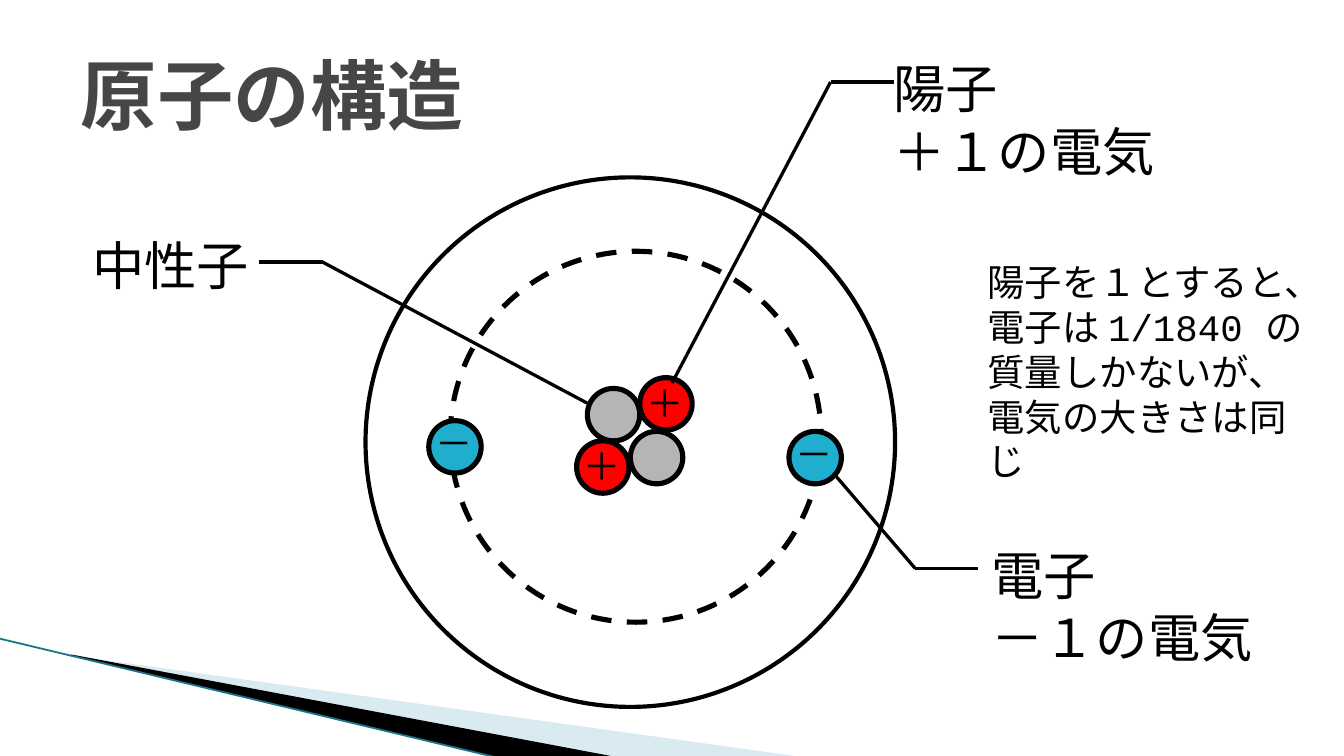
from lxml import etree
from pptx import Presentation
from pptx import util as u
from pptx.dml.color import RGBColor
from pptx.enum import dml, shapes, text
from pptx.oxml.ns import qn

COLORS = {
    "ink": "000000", "title": "464646", "shell": "FFFFFF",
    "neutron": "B5B5B5", "proton": "FF0000", "electron": "1FAECD",
    "pale_wedge": "A0CBDC", "dark_wedge": "000000", "edge": "1B7489",
}
PARTICLE = 0.39


def rgb(name):
    return RGBColor.from_string(COLORS[name])


def set_font(p, name, size, color="ink", bold=False):
    p.font.name, p.font.size, p.font.bold = name, u.Pt(size), bold
    p.font.color.rgb = rgb(color)


def add_wedge(s, points, color, opacity=None):
    start, *rest = [(u.Inches(x), u.Inches(y)) for x, y in points]
    builder = s.shapes.build_freeform(*start)
    builder.add_line_segments(rest, close=True)
    sp = builder.convert_to_shape()
    sp.shadow.inherit = False
    sp.fill.solid()
    sp.fill.fore_color.rgb = rgb(color)
    sp.line.fill.background()
    if opacity is not None:
        clr = sp.fill._xPr.find(".//" + qn("a:srgbClr"))
        etree.SubElement(clr, qn("a:alpha"), val=str(opacity * 1000))


def add_line(parent, start, end, width=1.75, color="ink"):
    ends = [u.Inches(v) for v in (*start, *end)]
    line = parent.shapes.add_connector(shapes.MSO_CONNECTOR.STRAIGHT, *ends)
    line.line.width = u.Pt(width)
    line.line.color.rgb = rgb(color)
    etree.SubElement(line._element.spPr, qn("a:effectLst"))


def add_circle(parent, left, top, size, width, fill=None, dashed=False):
    sp = parent.shapes.add_shape(
        shapes.MSO_SHAPE.OVAL, *map(u.Inches, (left, top, size, size)))
    sp.shadow.inherit = False
    if fill:
        sp.fill.solid()
        sp.fill.fore_color.rgb = rgb(fill)
    else:
        sp.fill.background()
    sp.line.color.rgb = rgb("ink")
    sp.line.width = u.Pt(width)
    if dashed:
        sp.line.dash_style = dml.MSO_LINE.DASH


def add_text(parent, box, lines, size, font="Courier New"):
    sp = parent.shapes.add_textbox(*map(u.Inches, box))
    tf = sp.text_frame
    tf.word_wrap = True
    tf.auto_size = text.MSO_AUTO_SIZE.SHAPE_TO_FIT_TEXT
    tf.text = "\n".join(lines)
    for p in tf.paragraphs:
        set_font(p, font, size)


def add_charge(s, left, top, kind, sign, offset, width):
    """Add a charged particle with its sign, offset up and left of the circle."""
    group = s.shapes.add_group_shape()
    add_circle(group, left, top, PARTICLE, 2.75, kind)
    add_text(group, (left - 0.05, top - offset, width, 0.44), [sign], 20, "Arial")


def add_callout(s, points, box, lines):
    """Add a label with a bent leader running through the given points."""
    group = s.shapes.add_group_shape()
    for start, end in zip(points, points[1:]):
        add_line(group, start, end)
    add_text(group, box, lines, 28)


def add_background(s):
    add_wedge(s, [(0.55, 4.88), (5.95, 5.63), (4.56, 5.63)], "pale_wedge", 40)
    add_wedge(s, [(0.53, 4.87), (4.57, 5.63), (3.72, 5.64), (0.54, 4.88)],
              "dark_wedge")
    add_line(s, (-0.01, 4.75), (3.71, 5.64), 0.95, "edge")


def set_title(s, title):
    sp = s.shapes.title
    sp.left, sp.top, sp.width, sp.height = map(u.Inches, (0.5, 0.23, 9, 0.94))
    tf = sp.text_frame
    tf.text = title
    tf.auto_size = text.MSO_AUTO_SIZE.NONE
    tf.vertical_anchor = text.MSO_ANCHOR.MIDDLE
    p = tf.paragraphs[0]
    p.alignment = text.PP_ALIGN.LEFT
    set_font(p, "Courier New", 41, "title", bold=True)


def add_atom(s):
    add_circle(s, 2.72, 1.32, 3.94, 2.25, "shell")
    for left, top in [(4.37, 2.89), (4.69, 3.21)]:
        add_circle(s, left, top, PARTICLE, 2.75, "neutron")
    add_circle(s, 3.35, 1.87, 2.76, 2.75, dashed=True)
    for left, top in [(4.76, 2.81), (4.29, 3.28)]:
        add_charge(s, left, top, "proton", "＋", 0.03, 0.63)
    for left, top in [(3.19, 3.13), (5.87, 3.21)]:
        add_charge(s, left, top, "electron", "－", 0.05, 0.52)


def main():
    prs = Presentation()
    prs.slide_width, prs.slide_height = u.Inches(10), u.Inches(5.625)
    s = prs.slides.add_slide(prs.slide_layouts[5])
    add_background(s)
    set_title(s, "原子の構造")
    add_atom(s)
    add_callout(s, [(5, 2.85), (6.18, 0.61), (6.65, 0.61)],
                (6.55, 0.37, 3.15, 1.04), ["陽子", "＋１の電気"])
    add_callout(s, [(4.37, 3), (2.4, 1.95), (1.93, 1.95)],
                (0.59, 1.69, 1.89, 0.57), ["中性子"])
    add_callout(s, [(6.2, 3.52), (6.81, 4.23), (7.28, 4.23)],
                (7.28, 3.99, 2.18, 1.04), ["電子", "－１の電気"])
    add_text(s, (7.25, 1.88, 2.6, 1.45),
             ["陽子を１とすると、電子は 1/1840 の質量しかないが、電気の大きさは同じ"], 20)
    prs.save("out.pptx")


if __name__ == "__main__":
    main()
